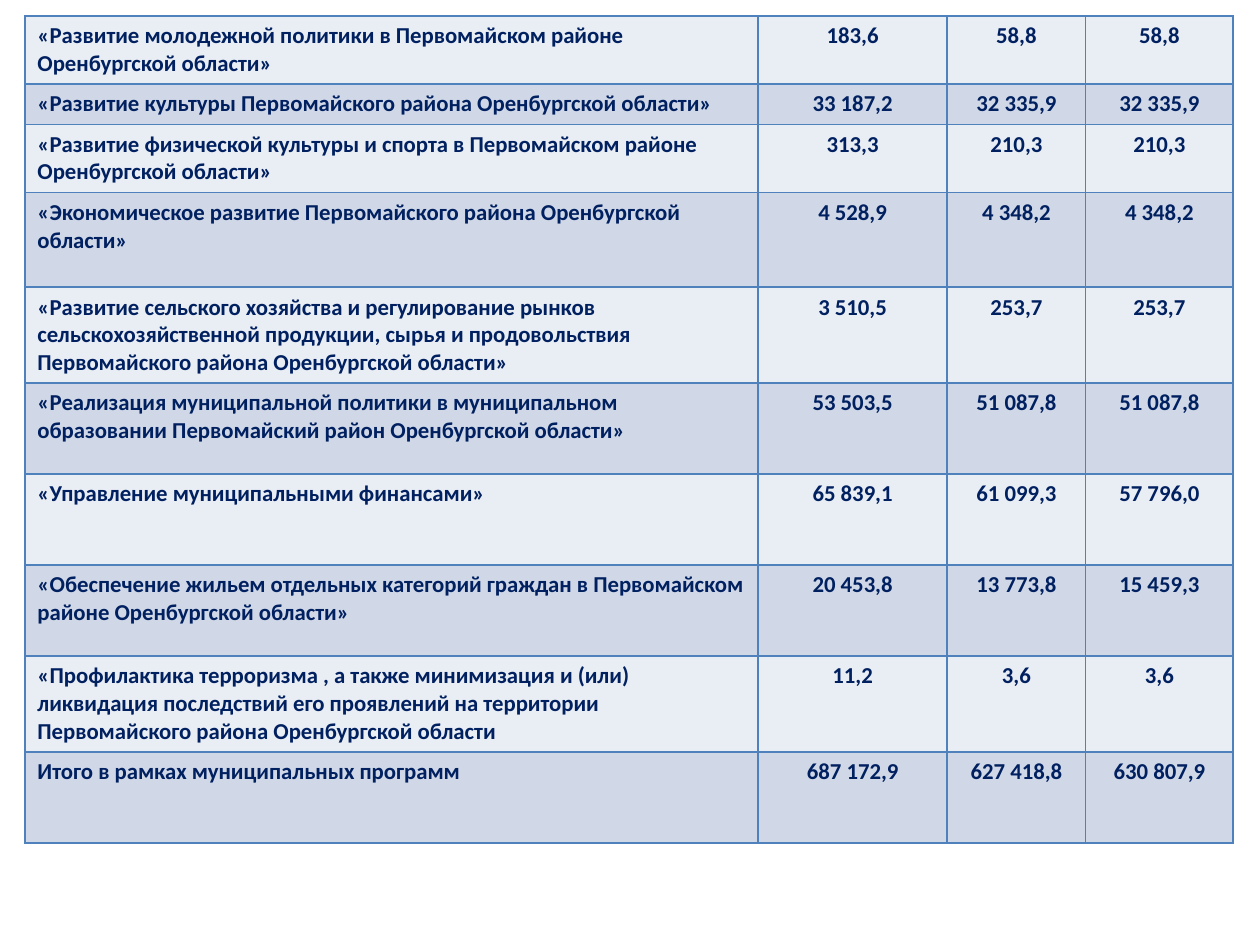
from lxml import etree
from pptx import Presentation
from pptx.dml.color import RGBColor
from pptx.enum.text import PP_ALIGN as AL
from pptx.oxml.ns import qn
from pptx.util import Pt

NAVY = RGBColor(0x00, 0x20, 0x60)
BLUE = RGBColor(0x4F, 0x81, 0xBD)
BANDS = [RGBColor(0xE9, 0xED, 0xF4), RGBColor(0xD0, 0xD8, 0xE8)]

COL_WIDTHS = [419, 108, 79.2, 84.2]
PROGRAMS = [
    (38.4, "«Развитие молодежной политики в Первомайском районе Оренбургской области»",
     "183,6", "58,8", "58,8"),
    (21.6, "«Развитие культуры Первомайского района Оренбургской области»",
     "33 187,2", "32 335,9", "32 335,9"),
    (38.4, "«Развитие физической культуры и спорта в Первомайском районе Оренбургской области»",
     "313,3", "210,3", "210,3"),
    (54.2, "«Экономическое развитие Первомайского района Оренбургской области»",
     "4 528,9", "4 348,2", "4 348,2"),
    (52, "«Развитие сельского хозяйства и регулирование рынков сельскохозяйственной "
     "продукции, сырья и продовольствия Первомайского района Оренбургской области»",
     "3 510,5", "253,7", "253,7"),
    (52, "«Реализация муниципальной политики в муниципальном образовании "
     "Первомайский район Оренбургской области»",
     "53 503,5", "51 087,8", "51 087,8"),
    (52, "«Управление муниципальными финансами»",
     "65 839,1", "61 099,3", "57 796,0"),
    (52, "«Обеспечение жильем отдельных категорий граждан в Первомайском районе "
     "Оренбургской области»",
     "20 453,8", "13 773,8", "15 459,3"),
    (52, "«Профилактика терроризма , а также минимизация и (или) ликвидация "
     "последствий его проявлений на территории Первомайского района Оренбургской области",
     "11,2", "3,6", "3,6"),
    (52, "Итого в рамках муниципальных программ",
     "687 172,9", "627 418,8", "630 807,9"),
]


def add_borders(cell):
    tc_pr = cell._tc.get_or_add_tcPr()
    for side in ("a:lnL", "a:lnR", "a:lnT", "a:lnB"):
        ln = etree.SubElement(tc_pr, qn(side), w=str(Pt(1)))
        fill = etree.SubElement(ln, qn("a:solidFill"))
        etree.SubElement(fill, qn("a:srgbClr"), val=str(BLUE))


prs = Presentation()
prs.slide_width, prs.slide_height = Pt(720), Pt(540)
s = prs.slides.add_slide(prs.slide_layouts[6])

height = sum(program[0] for program in PROGRAMS)
table = s.shapes.add_table(len(PROGRAMS), len(COL_WIDTHS), Pt(14.2), Pt(9),
                           Pt(sum(COL_WIDTHS)), Pt(height)).table
table.first_row = False
for column, width in zip(table.columns, COL_WIDTHS):
    column.width = Pt(width)

for i, (row_height, *texts) in enumerate(PROGRAMS):
    table.rows[i].height = Pt(row_height)
    for j, text in enumerate(texts):
        cell = table.cell(i, j)
        add_borders(cell)
        cell.fill.solid()
        cell.fill.fore_color.rgb = BANDS[i % 2]
        cell.text = text
        p = cell.text_frame.paragraphs[0]
        p.alignment = AL.CENTER if j else AL.LEFT
        p.font.name = "Calibri"
        p.font.size = Pt(13)
        p.font.bold = True
        p.font.color.rgb = NAVY

prs.save("out.pptx")
